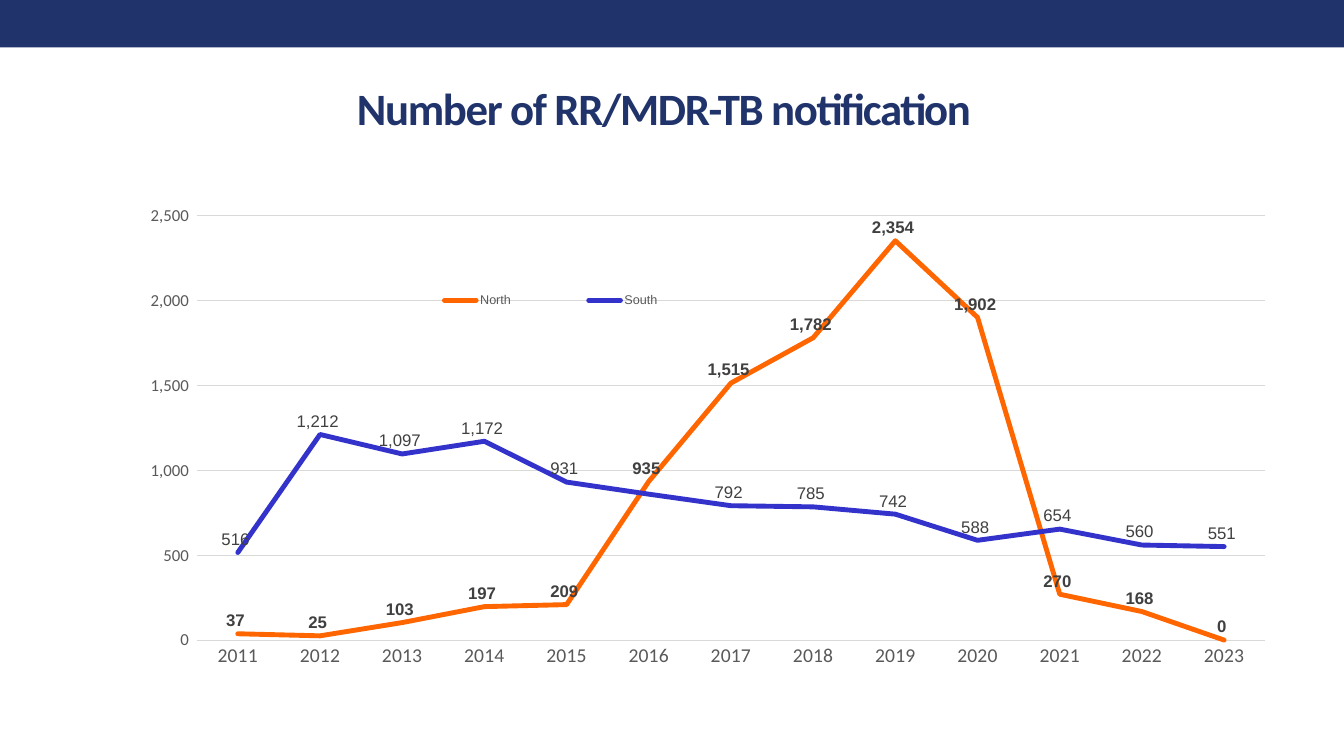
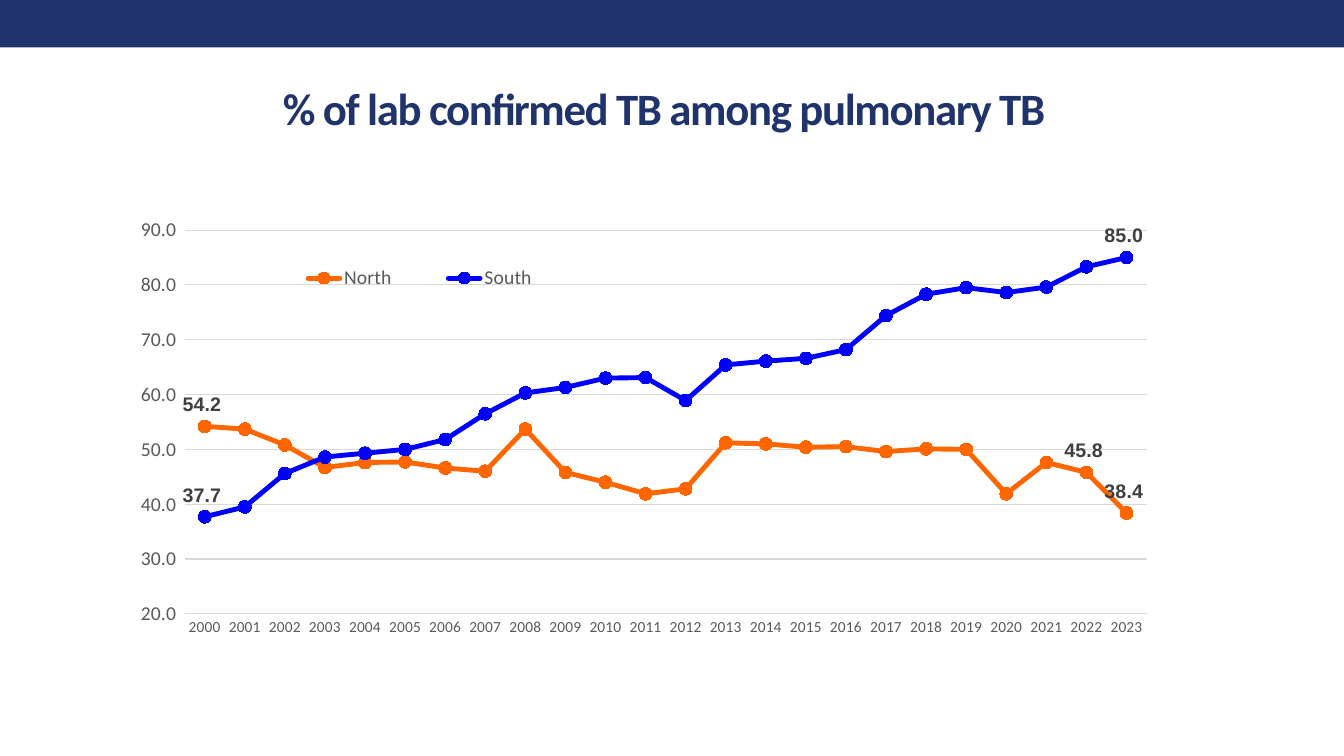
from lxml.etree import SubElement
from pptx import Presentation
from pptx.chart.data import CategoryChartData
from pptx.dml.color import RGBColor
from pptx.enum.chart import (XL_CHART_TYPE, XL_LABEL_POSITION, XL_LEGEND_POSITION,
                             XL_MARKER_STYLE, XL_TICK_MARK)
from pptx.enum.shapes import MSO_SHAPE
from pptx.enum.text import MSO_ANCHOR, PP_ALIGN
from pptx.oxml import parse_xml
from pptx.oxml.ns import nsdecls, qn
from pptx.util import Inches, Pt


def rgb(value):
    return RGBColor.from_string(value)


def style_font(font, size, color, name, bold=False):
    font.size, font.name, font.bold = Pt(size), name, bold
    font.color.rgb = rgb(color)


def write_text(frame, text, size, color, name, bold=False, align=PP_ALIGN.LEFT, spacing=0):
    paragraph = frame.paragraphs[0]
    paragraph.alignment = align
    run = paragraph.add_run()
    run.text = text
    style_font(run.font, size, color, name, bold)
    run.font._element.set("spc", str(spacing * 100))


def set_layout(parent, index, box, inner=False):
    for previous in parent.findall(qn("c:layout")):
        parent.remove(previous)
    layout = parse_xml(f"<c:layout {nsdecls('c')}><c:manualLayout/></c:layout>")
    settings = [("layoutTarget", "inner")] if inner else []
    settings += [("xMode", "edge"), ("yMode", "edge"), *zip("xywh", box)]
    for tag, value in settings:
        SubElement(layout[0], qn(f"c:{tag}")).set("val", str(value))
    parent.insert(index, layout)


class Deck:
    """Holds the shared style and the current slide."""
    navy, grey, label_grey, rule = "20346B", "595959", "404040", "D9D9D9"
    heading, body = "Calibri", "Arial"

    def __init__(self):
        self.presentation = Presentation()
        self.presentation.slide_width = Inches(13.33)
        self.presentation.slide_height = Inches(7.5)

    def new_slide(self, title):
        self.slide = self.presentation.slides.add_slide(self.presentation.slide_layouts[6])
        self.band()
        self.title(title)

    def band(self):
        band = self.slide.shapes.add_shape(
            MSO_SHAPE.RECTANGLE, 0, 0, self.presentation.slide_width, Inches(0.47))
        band.shadow.inherit = False
        band.fill.solid()
        band.fill.fore_color.rgb = rgb(self.navy)
        band.line.fill.background()

    def title(self, text):
        frame = self.slide.shapes.add_textbox(
            Inches(0.55), Inches(0.6), Inches(12.07), Inches(0.93)).text_frame
        frame.word_wrap = True
        frame.vertical_anchor = MSO_ANCHOR.MIDDLE
        write_text(frame, text, size=32, color=self.navy, name=self.heading,
                   bold=True, align=PP_ALIGN.CENTER, spacing=-1)

    def line_chart(self, box, years, series, number_format, scale, plot, legend_box,
                   year_size, scale_size, legend_font, label_size, markers=False):
        data = CategoryChartData(number_format=number_format)
        data.categories = [str(year) for year in years]
        for region in series:
            data.add_series(region["name"], region["values"])
        kind = XL_CHART_TYPE.LINE_MARKERS if markers else XL_CHART_TYPE.LINE
        chart = self.slide.shapes.add_chart(kind, *map(Inches, box), data).chart
        chart.has_title = False
        style_font(chart.font, 10, "000000", self.body)
        chart.plots[0].vary_by_categories = False
        set_layout(chart.plots[0]._element.getparent(), 0, plot, inner=True)
        self.axes(chart, scale, number_format, year_size, scale_size)
        self.legend(chart, legend_box, legend_font)
        for line, region in zip(chart.plots[0].series, series):
            self.series(line, region, label_size, markers)

    def axes(self, chart, scale, number_format, year_size, scale_size):
        years, values = chart.category_axis, chart.value_axis
        for axis, size in ((years, year_size), (values, scale_size)):
            axis.major_tick_mark = axis.minor_tick_mark = XL_TICK_MARK.NONE
            style_font(axis.tick_labels.font, size, self.grey, self.heading)
        values.minimum_scale, values.maximum_scale, values.major_unit = scale
        values.tick_labels.number_format = number_format
        values.tick_labels.number_format_is_linked = False
        values.has_major_gridlines = True
        values.format.line.fill.background()
        for line in (years.format.line, values.major_gridlines.format.line):
            line.color.rgb = rgb(self.rule)
            line.width = Pt(0.75)

    def legend(self, chart, box, font):
        chart.has_legend = True
        chart.legend.position = XL_LEGEND_POSITION.BOTTOM
        chart.legend.include_in_layout = False
        size, name = font
        style_font(chart.legend.font, size, self.grey, name)
        set_layout(chart.legend._element, 1, box)

    def series(self, line, region, label_size, markers):
        line.smooth = False
        line.format.line.color.rgb = rgb(region["color"])
        line.format.line.width = Pt(3.5)
        line._element.xpath("c:spPr/a:ln")[0].set("cap", "rnd")
        if markers:
            line.marker.style, line.marker.size = XL_MARKER_STYLE.CIRCLE, 9
            line.marker.format.fill.solid()
            line.marker.format.fill.fore_color.rgb = rgb(region["color"])
            line.marker.format.line.color.rgb = rgb(region["color"])
        else:
            line.marker.style = XL_MARKER_STYLE.NONE
        line.data_labels.show_value = False
        for index in region["labelled"]:
            label = line.points[index].data_label
            style_font(label.font, label_size, self.label_grey, self.body, region["bold"])
            label.position = XL_LABEL_POSITION.ABOVE


def main():
    deck = Deck()

    deck.new_slide("Number of RR/MDR-TB notification")
    notified_north = [37, 25, 103, 197, 209, 935, 1515, 1782, 2354, 1902, 270, 168, 0]
    notified_south = [516, 1212, 1097, 1172, 931, 860, 792, 785, 742, 588, 654, 560, 551]
    deck.line_chart(
        (1.26, 1.94, 11.52, 5.07), range(2011, 2024),
        [dict(name="North", values=notified_north, color="FF6600", bold=True,
              labelled=range(13)),
         dict(name="South", values=notified_south, color="3333CC", bold=False,
              labelled=[index for index in range(13) if index != 5])],
        number_format="#,##0_ ", scale=(0, 2500, 500),
        plot=(0.06, 0.04, 0.92, 0.83), legend_box=(0.21, 0.17, 0.31, 0.07),
        year_size=14, scale_size=12, legend_font=(9, deck.body), label_size=12)

    deck.new_slide("% of lab confirmed TB among pulmonary TB")
    confirmed_north = [54.2, 53.7, 50.8, 46.7, 47.6, 47.7, 46.6, 46.0, 53.7, 45.8, 44.0, 41.9,
                       42.8, 51.2, 51.0, 50.4, 50.5, 49.6, 50.1, 50.0, 41.9, 47.6, 45.8, 38.4]
    confirmed_south = [37.7, 39.5, 45.6, 48.6, 49.3, 50.0, 51.8, 56.5, 60.3, 61.3, 63.0, 63.1,
                       58.9, 65.4, 66.1, 66.6, 68.2, 74.4, 78.3, 79.5, 78.6, 79.6, 83.3, 85.0]
    deck.line_chart(
        (1.21, 2.14, 10.37, 4.76), range(2000, 2024),
        [dict(name="North", values=confirmed_north, color="FF6600", bold=True,
              labelled=(0, 22, 23)),
         dict(name="South", values=confirmed_south, color="0000FF", bold=True,
              labelled=(0, 23))],
        number_format="0.0_ ", scale=(20, 90, 10),
        plot=(0.06, 0.03, 0.92, 0.8), legend_box=(0.13, 0.09, 0.31, 0.08),
        year_size=11, scale_size=14, legend_font=(14, deck.heading), label_size=14,
        markers=True)

    deck.presentation.save("out.pptx")


if __name__ == "__main__":
    main()
